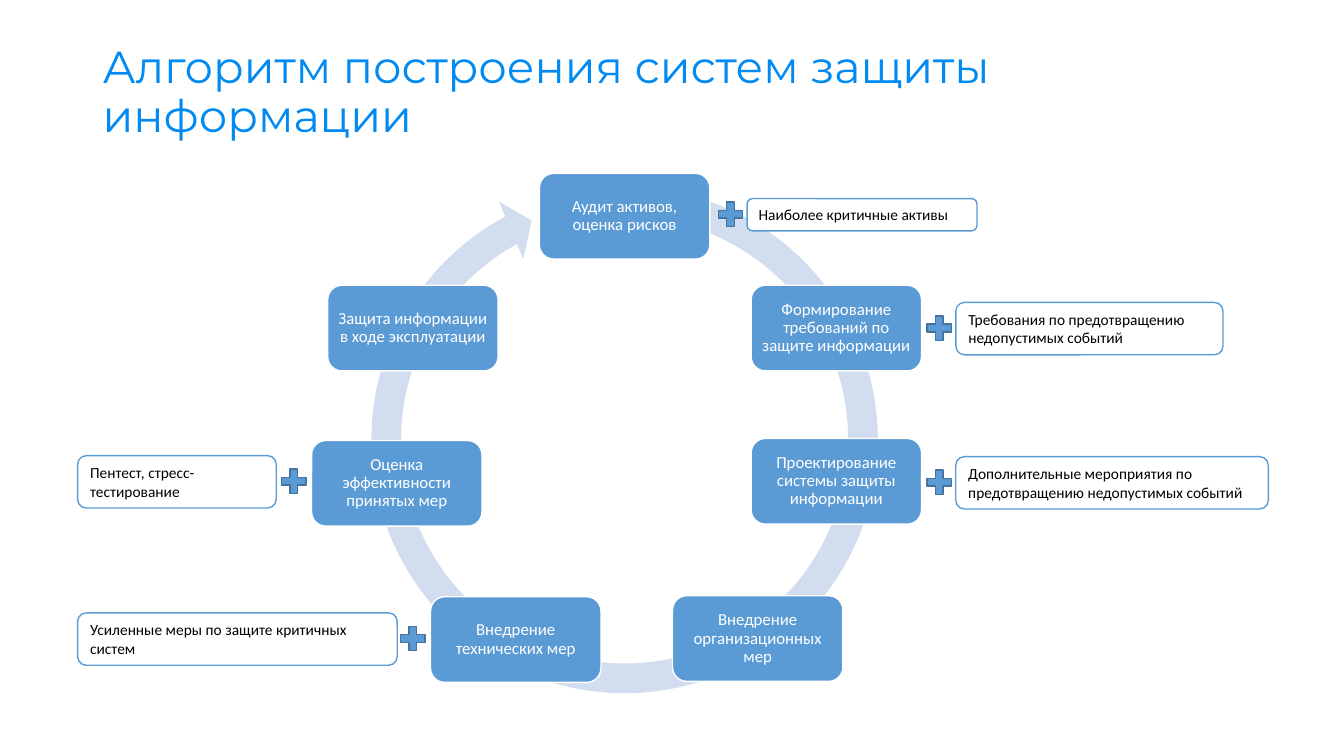
from dataclasses import dataclass

from pptx import Presentation
from pptx.dml.color import RGBColor
from pptx.enum.shapes import MSO_SHAPE
from pptx.enum.text import MSO_ANCHOR, PP_ALIGN
from pptx.util import Pt

PIXEL = 9144


@dataclass(frozen=True)
class Theme:
    white: str = "FFFFFF"
    black: str = "000000"
    title: str = "008AF2"
    accent: str = "5B9BD5"
    accent_dark: str = "43739E"
    ring: str = "D2DEEF"
    heading_font: str = "Montserrat"
    body_font: str = "Calibri"
    title_size: int = 32
    stage_size: int = 12
    note_size: int = 11


@dataclass(frozen=True)
class Box:
    left: int
    top: int
    width: int
    height: int

    def emu(self):
        return [value * PIXEL for value in (self.left, self.top, self.width, self.height)]


THEME = Theme()
STAGE_WIDTH, STAGE_HEIGHT = 169, 85
PLUS_SIZE = 33
PLUS_GAP = 1

CYCLE_STAGES = [
    ("Аудит активов, оценка рисков", 535, 172,
     "Наиболее критичные активы", Box(741, 197, 228, 32)),
    ("Формирование требований по защите информации", 745, 283,
     "Требования по предотвращению\nнедопустимых событий", Box(948, 300, 265, 52)),
    ("Проектирование системы защиты информации", 745, 435,
     "Дополнительные мероприятия по\nпредотвращению недопустимых событий", Box(948, 453, 310, 52)),
    ("Внедрение организационных мер", 667, 591, None, None),
    ("Внедрение технических мер", 427, 592,
     "Усиленные меры по защите критичных систем", Box(77, 608, 317, 52)),
    ("Оценка эффективности принятых мер", 309, 437,
     "Пентест, стресс-тестирование", Box(77, 452, 197, 52)),
    ("Защита информации в ходе эксплуатации", 325, 283, None, None),
]


def write_text(shape, text, *, size, color, font=THEME.body_font, align=PP_ALIGN.LEFT,
               anchor=MSO_ANCHOR.TOP, spacing=1.0, margin=None):
    frame = shape.text_frame
    frame.word_wrap = True
    frame.vertical_anchor = anchor
    if margin is not None:
        frame.margin_left = frame.margin_right = margin * PIXEL
        frame.margin_top = frame.margin_bottom = margin * PIXEL
    frame.text = text
    for paragraph in frame.paragraphs:
        paragraph.alignment = align
        paragraph.line_spacing = spacing
        paragraph.font.size = Pt(size)
        paragraph.font.name = font
        paragraph.font.color.rgb = RGBColor.from_string(color)


def add_preset(slide, kind, box, fill, line=None):
    shape = slide.shapes.add_shape(kind, *box.emu())
    shape.shadow.inherit = False
    shape.fill.solid()
    shape.fill.fore_color.rgb = RGBColor.from_string(fill)
    if line:
        shape.line.color.rgb = RGBColor.from_string(line)
        shape.line.width = Pt(1)
    else:
        shape.line.fill.background()
    return shape


def add_title(slide, box):
    shape = slide.shapes.add_textbox(*box.emu())
    write_text(shape, "Алгоритм построения систем защиты информации", size=THEME.title_size,
               color=THEME.title, font=THEME.heading_font, spacing=0.9)


def add_ring(slide, box):
    ring = add_preset(slide, MSO_SHAPE.CIRCULAR_ARROW, box, THEME.ring)
    for index, value in enumerate((0.055, 3.307, 144.935, 169.63, 0.058)):
        ring.adjustments[index] = value


def add_stage(slide, box, text):
    shape = add_preset(slide, MSO_SHAPE.ROUNDED_RECTANGLE, box, THEME.accent, THEME.white)
    write_text(shape, text, size=THEME.stage_size, color=THEME.white, align=PP_ALIGN.CENTER,
               anchor=MSO_ANCHOR.MIDDLE, spacing=0.9, margin=5)


def add_note(slide, box, text, stage):
    if box.left > stage.left:
        plus_left = box.left - PLUS_SIZE
    else:
        plus_left = stage.left - PLUS_SIZE - PLUS_GAP
    plus_top = box.top + (box.height - PLUS_SIZE) // 2
    plus = Box(plus_left, plus_top, PLUS_SIZE, PLUS_SIZE)
    add_preset(slide, MSO_SHAPE.MATH_PLUS, plus, THEME.accent, THEME.accent_dark)
    shape = add_preset(slide, MSO_SHAPE.ROUNDED_RECTANGLE, box, THEME.white, THEME.accent)
    write_text(shape, text, size=THEME.note_size, color=THEME.black, anchor=MSO_ANCHOR.MIDDLE)


def add_cycle(slide, box):
    add_ring(slide, box)
    for text, left, top, note_text, note_box in CYCLE_STAGES:
        stage = Box(left, top, STAGE_WIDTH, STAGE_HEIGHT)
        add_stage(slide, stage, text)
        if note_box:
            add_note(slide, note_box, note_text, stage)


def main():
    presentation = Presentation()
    presentation.slide_width = 1333 * PIXEL
    presentation.slide_height = 750 * PIXEL
    slide = presentation.slides.add_slide(presentation.slide_layouts[6])
    add_cycle(slide, Box(352, 169, 535, 535))
    add_title(slide, Box(92, 40, 1150, 83))
    presentation.save("out.pptx")


if __name__ == "__main__":
    main()
